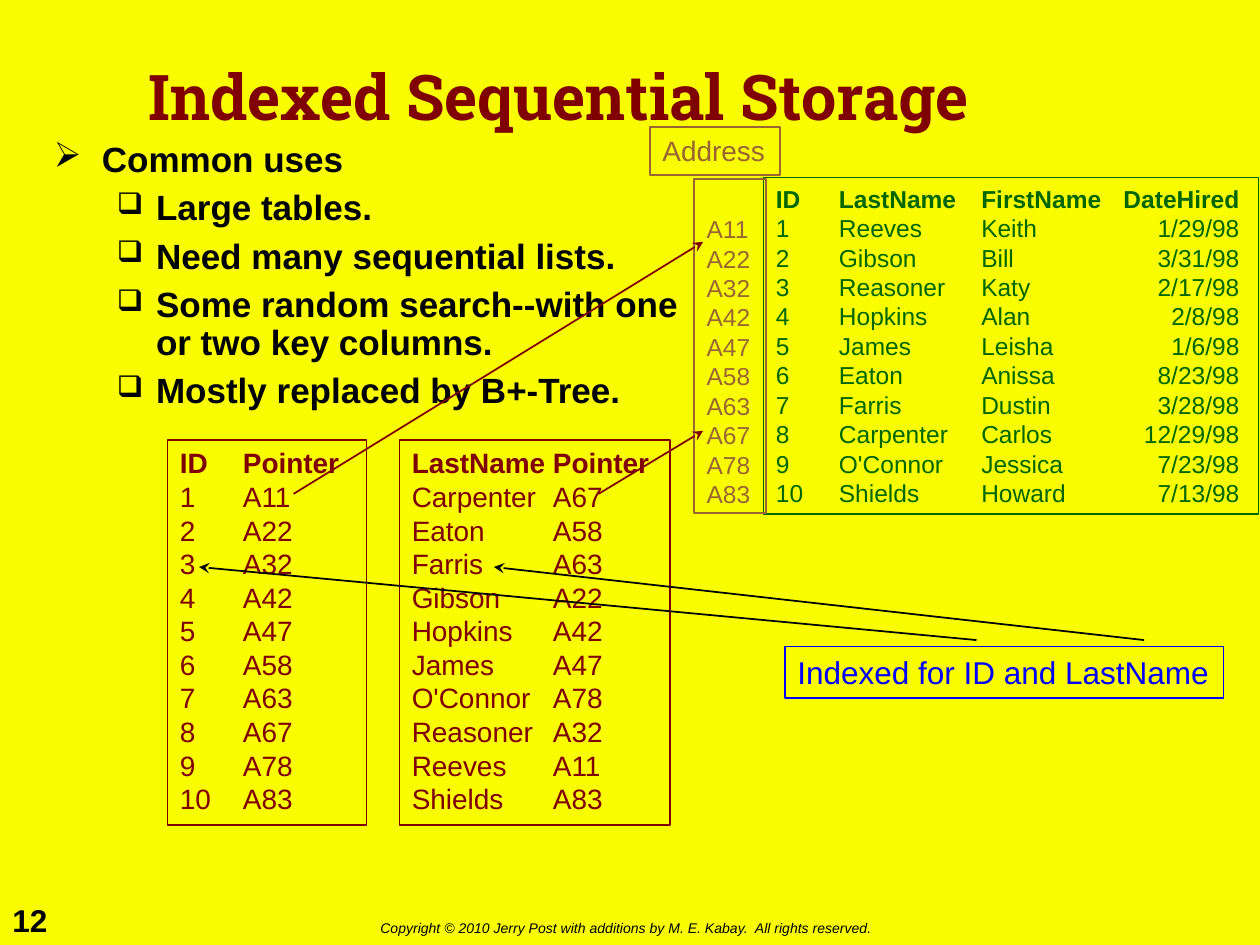
from dataclasses import dataclass
from typing import NamedTuple

from lxml.etree import SubElement
from pptx import Presentation
from pptx.dml.color import RGBColor
from pptx.enum.shapes import MSO_CONNECTOR, MSO_SHAPE
from pptx.enum.text import MSO_ANCHOR, MSO_AUTO_SIZE, PP_ALIGN
from pptx.oxml.ns import qn
from pptx.util import Inches, Pt

YELLOW, MAROON, GREEN = "FAFD00", "800000", "006600"
BROWN, BLUE, BLACK = "996633", "0000FF", "000000"


class Employee(NamedTuple):
    address: str
    last_name: str
    first_name: str
    date_hired: str


@dataclass
class TextBlock:
    left: float
    top: float
    width: float
    height: float
    lines: list[str]
    size: float
    color: str
    font: str = "Arial"
    bold: bool = False
    italic: bool = False
    bold_header: bool = False
    outlined: bool = False
    wrap: bool = False
    grow: bool = True
    middle: bool = False
    top_inset: float = 0.05
    line_spacing: float | None = None
    tabs: tuple[tuple[float, str], ...] = ()


class Arrow(NamedTuple):
    start: tuple[float, float]
    end: tuple[float, float]
    color: str


class Bullet(NamedTuple):
    symbol: str
    level: int
    indent: float
    hanging: float
    size_percent: int


EMPLOYEES = [
    Employee("A11", "Reeves", "Keith", "1/29/98"),
    Employee("A22", "Gibson", "Bill", "3/31/98"),
    Employee("A32", "Reasoner", "Katy", "2/17/98"),
    Employee("A42", "Hopkins", "Alan", "2/8/98"),
    Employee("A47", "James", "Leisha", "1/6/98"),
    Employee("A58", "Eaton", "Anissa", "8/23/98"),
    Employee("A63", "Farris", "Dustin", "3/28/98"),
    Employee("A67", "Carpenter", "Carlos", "12/29/98"),
    Employee("A78", "O'Connor", "Jessica", "7/23/98"),
    Employee("A83", "Shields", "Howard", "7/13/98"),
]
MAIN_BULLET = Bullet("➢", 0, 0.38, 0.38, 100)
SUB_BULLET = Bullet("❑", 1, 0.81, 0.31, 85)


def rgb(color: str) -> RGBColor:
    return RGBColor.from_string(color)


def add_tabs(paragraph, tabs) -> None:
    tab_list = SubElement(paragraph._p.get_or_add_pPr(), qn("a:tabLst"))
    for position, alignment in tabs:
        SubElement(tab_list, qn("a:tab"), pos=str(Inches(position)), algn=alignment)


def add_bullet(paragraph, bullet: Bullet) -> None:
    properties = paragraph._p.get_or_add_pPr()
    properties.set("marL", str(Inches(bullet.indent)))
    properties.set("indent", str(-Inches(bullet.hanging)))
    paragraph.level = bullet.level
    color = SubElement(properties, qn("a:buClr"))
    SubElement(color, qn("a:srgbClr"), val=BLACK)
    SubElement(properties, qn("a:buSzPct"), val=str(bullet.size_percent * 1000))
    SubElement(properties, qn("a:buChar"), char=bullet.symbol)


def add_text_block(slide, block: TextBlock):
    bounds = [Inches(v) for v in (block.left, block.top, block.width, block.height)]
    if block.outlined:
        shape = slide.shapes.add_shape(MSO_SHAPE.RECTANGLE, *bounds)
        shape.shadow.inherit = False
        shape.fill.background()
        shape.line.color.rgb = rgb(block.color)
        shape.line.width = Pt(1)
    else:
        shape = slide.shapes.add_textbox(*bounds)
    frame = shape.text_frame
    frame.word_wrap = block.wrap
    frame.auto_size = MSO_AUTO_SIZE.SHAPE_TO_FIT_TEXT if block.grow else MSO_AUTO_SIZE.NONE
    frame.vertical_anchor = MSO_ANCHOR.MIDDLE if block.middle else MSO_ANCHOR.TOP
    frame.margin_left = frame.margin_right = Inches(0.1)
    frame.margin_top, frame.margin_bottom = Inches(block.top_inset), Inches(0.05)
    for index, line in enumerate(block.lines):
        paragraph = frame.paragraphs[0] if index == 0 else frame.add_paragraph()
        paragraph.alignment = PP_ALIGN.LEFT
        if block.line_spacing:
            paragraph.line_spacing = block.line_spacing
        if block.tabs:
            add_tabs(paragraph, block.tabs)
        run = paragraph.add_run()
        run.text = line
        run.font.name = block.font
        run.font.size = Pt(block.size)
        run.font.bold = block.bold or (block.bold_header and index == 0)
        run.font.italic = block.italic
        run.font.color.rgb = rgb(block.color)
    return shape


def add_arrow(slide, arrow: Arrow) -> None:
    points = [Inches(value) for value in (*arrow.start, *arrow.end)]
    connector = slide.shapes.add_connector(MSO_CONNECTOR.STRAIGHT, *points)
    connector.line.color.rgb = rgb(arrow.color)
    connector.line.width = Pt(1)
    SubElement(connector.line._get_or_add_ln(), qn("a:tailEnd"), type="stealth")
    SubElement(connector._element.spPr, qn("a:effectLst"))


def add_uses(slide) -> None:
    uses = ["Common uses", "Large tables.", "Need many sequential lists.",
            "Some random search--with one or two key columns.",
            "Mostly replaced by B+-Tree."]
    shape = add_text_block(slide, TextBlock(
        0.33, 1.08, 5.25, 2.42, uses, 20, BLACK, bold=True,
        wrap=True, grow=False, line_spacing=0.9))
    for index, paragraph in enumerate(shape.text_frame.paragraphs):
        add_bullet(paragraph, SUB_BULLET if index else MAIN_BULLET)
        if index:
            paragraph.space_before = Pt(6)


def add_index(slide, left: float, width: float, tab: float, lines: list[str]) -> None:
    add_text_block(slide, TextBlock(
        left, 3.49, width, 3.06, lines, 16, MAROON, bold_header=True,
        outlined=True, wrap=True, tabs=((tab, "l"),)))


def main() -> None:
    presentation = Presentation()
    presentation.slide_width, presentation.slide_height = Inches(10), Inches(7.5)
    slide = presentation.slides.add_slide(presentation.slide_layouts[6])
    slide.background.fill.solid()
    slide.background.fill.fore_color.rgb = rgb(YELLOW)

    # Footer, title and bullets
    add_text_block(slide, TextBlock(0, 7.1, 0.51, 0.4, ["12"], 18, BLACK, bold=True))
    add_text_block(slide, TextBlock(
        2.92, 7.25, 4.22, 0.24,
        ["Copyright © 2010 Jerry Post with additions by M. E. Kabay.  All rights reserved."],
        8, BLACK, italic=True))
    add_text_block(slide, TextBlock(
        1.08, 0.17, 7.83, 1.25, ["Indexed Sequential Storage"], 36, MAROON,
        font="Roboto Slab", bold=True, wrap=True, grow=False, middle=True, line_spacing=0.9))
    add_uses(slide)

    # Stored rows, the index by ID and the address column
    rows = [f"{number}\t{e.last_name}\t{e.first_name}\t{e.date_hired}"
            for number, e in enumerate(EMPLOYEES, 1)]
    add_text_block(slide, TextBlock(
        6.06, 1.41, 3.93, 2.67, ["ID\tLastName\tFirstName\tDateHired", *rows], 14, GREEN,
        bold_header=True, outlined=True, wrap=True,
        tabs=((0.5, "l"), (1.63, "l"), (3.68, "r"))))
    add_index(slide, 1.33, 1.58, 0.5, ["ID\tPointer"] + [
        f"{number}\t{e.address}" for number, e in enumerate(EMPLOYEES, 1)])
    add_text_block(slide, TextBlock(
        5.51, 1.42, 0.57, 2.65, [e.address for e in EMPLOYEES], 14, BROWN,
        outlined=True, grow=False, top_inset=0.28))
    add_text_block(slide, TextBlock(
        5.16, 1.01, 1.03, 0.38, ["Address"], 16, BROWN, outlined=True))
    add_arrow(slide, Arrow((2.33, 3.92), (5.58, 1.92), MAROON))

    # Index by last name
    by_name = sorted(EMPLOYEES, key=lambda e: e.last_name)
    add_index(slide, 3.17, 2.15, 1.12, ["LastName\tPointer"] + [
        f"{e.last_name}\t{e.address}" for e in by_name])
    add_arrow(slide, Arrow((4.75, 3.92), (5.58, 3.42), MAROON))

    # Label pointing at both indexes
    add_text_block(slide, TextBlock(
        6.23, 5.13, 3.48, 0.41, ["Indexed for ID and LastName"], 18, BLUE, outlined=True))
    add_arrow(slide, Arrow((7.75, 5.08), (1.58, 4.5), BLACK))
    add_arrow(slide, Arrow((9.08, 5.08), (3.92, 4.5), BLACK))

    presentation.save("out.pptx")


if __name__ == "__main__":
    main()
